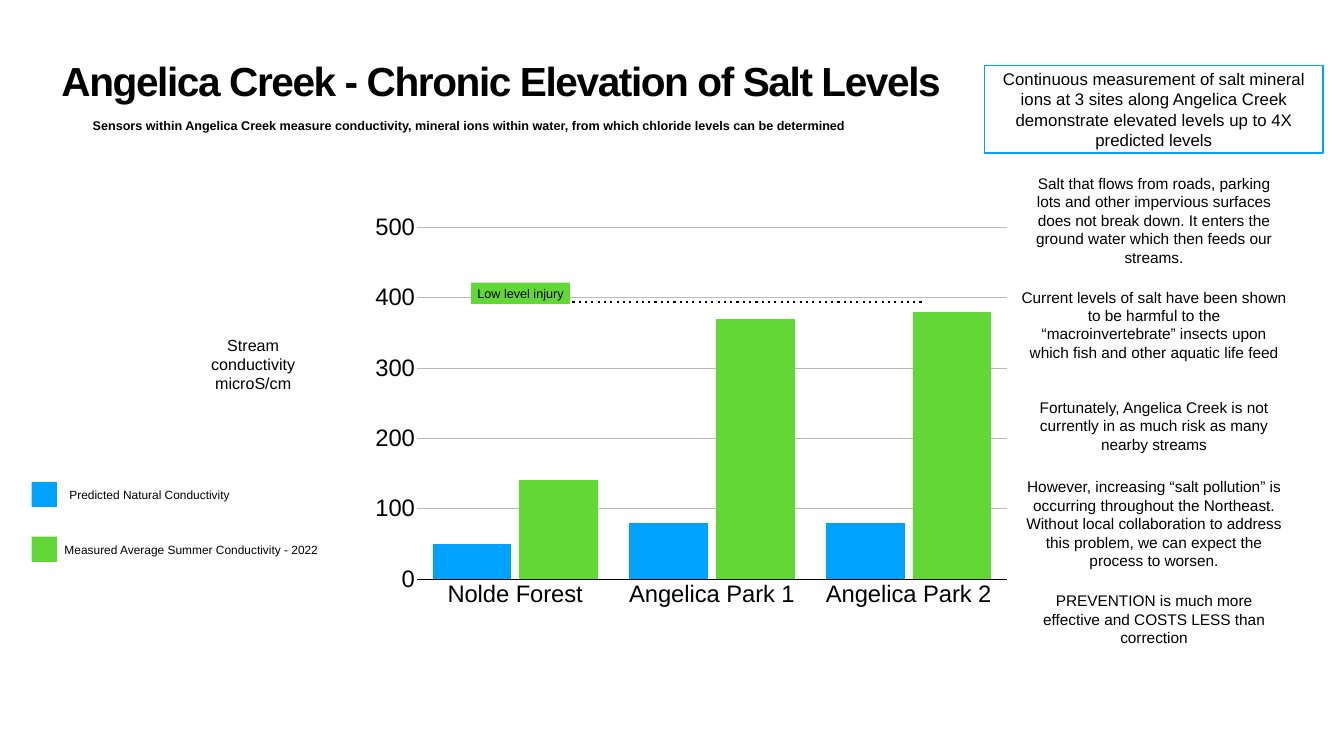
from dataclasses import dataclass

from lxml.etree import SubElement
from pptx import Presentation
from pptx.chart.data import CategoryChartData
from pptx.dml.color import RGBColor
from pptx.enum.chart import XL_CHART_TYPE, XL_TICK_MARK
from pptx.enum.shapes import MSO_CONNECTOR, MSO_SHAPE
from pptx.enum.text import MSO_ANCHOR, PP_ALIGN
from pptx.oxml import parse_xml
from pptx.oxml.ns import nsdecls, qn
from pptx.util import Inches, Pt


@dataclass(frozen=True)
class Theme:
    """Colours, font and type sizes of the slide."""
    font: str = "Arial"
    ink: str = "000000"
    paper: str = "FFFFFF"
    grid: str = "B8B8B8"
    predicted: str = "00A2FF"
    measured: str = "61D836"
    title: int = 58
    axis: int = 34
    callout: int = 24
    unit: int = 23
    body: int = 22
    small: int = 18
    legend: int = 17


THEME = Theme()
SIDE_NOTES = [
    ((20.27, 3.38, 5.26, 1.98), "Salt that flows from roads, parking lots and other impervious surfaces "
     "does not break down. It enters the ground water which then feeds our streams."),
    ((20.2, 5.64, 5.4, 1.6), "Current levels of salt have been shown to be harmful to the "
     "“macroinvertebrate” insects upon which fish and other aquatic life feed"),
    ((20.3, 7.83, 5.2, 1.23), "Fortunately, Angelica Creek is not currently in as much risk as many "
     "nearby streams"),
    ((20.3, 9.21, 5.2, 2.35), "However, increasing “salt pollution” is occurring throughout the Northeast. "
     "Without local collaboration to address this problem, we can expect the process to worsen."),
    ((20.6, 11.67, 4.6, 1.23), "PREVENTION is much more effective and COSTS LESS than correction"),
]
LEGEND = [
    (9.56, THEME.predicted, (1.29, 3.36), "Predicted Natural Conductivity"),
    (10.65, THEME.measured, (1.2, 5.26), "Measured Average Summer Conductivity - 2022 "),
]


def color(value):
    """Turn a hex string into a colour."""
    return RGBColor.from_string(value)


def style_font(font, size, bold=False):
    """Give a font the theme face and ink at a size."""
    font.name = THEME.font
    font.size = Pt(size)
    font.bold = bold
    font.color.rgb = color(THEME.ink)


def write(shape, text, size, bold=False, align=PP_ALIGN.CENTER,
          anchor=MSO_ANCHOR.MIDDLE, wrap=True):
    """Write one paragraph into a shape and return its span."""
    frame = shape.text_frame
    frame.word_wrap = wrap
    frame.vertical_anchor = anchor
    frame.margin_left = frame.margin_right = Inches(0.06)
    frame.margin_top = frame.margin_bottom = Inches(0.06)
    para = frame.paragraphs[0]
    para.alignment = align
    span = para.add_run()
    span.text = text
    style_font(span.font, size, bold)
    return span


def add_text(page, area, text, size, **options):
    """Add a text box and return its span."""
    box = page.shapes.add_textbox(*map(Inches, area))
    return write(box, text, size, **options)


def add_block(page, area, fill, line=None):
    """Add a filled rectangle, outlined when a line colour is given."""
    block = page.shapes.add_shape(MSO_SHAPE.RECTANGLE, *map(Inches, area))
    block.shadow.inherit = False
    block.fill.solid()
    block.fill.fore_color.rgb = color(fill)
    if line:
        block.line.color.rgb = color(line)
        block.line.width = Pt(2)
    else:
        block.line.fill.background()
    return block


def add_heading(page):
    """Add the tightly spaced title and the subtitle."""
    span = add_text(page, (1.16, 0.33, 24.03, 1.79),
                    "Angelica Creek - Chronic Elevation of Salt Levels", THEME.title,
                    bold=True, align=PP_ALIGN.LEFT, anchor=MSO_ANCHOR.BOTTOM)
    span.font._element.set("spc", "-200")
    page.shapes[-1].text_frame.paragraphs[0].line_spacing = 0.8
    add_text(page, (1.78, 2.27, 15.22, 0.67),
             "Sensors within Angelica Creek measure conductivity, mineral ions within water, "
             "from which chloride levels can be determined", THEME.small,
             bold=True, align=PP_ALIGN.LEFT, anchor=MSO_ANCHOR.TOP)


def place_plot(chart, x, y, width, height):
    """Fix the inner plot area as fractions of the chart."""
    area = chart.element.find(".//" + qn("c:plotArea"))
    for layout in area.findall(qn("c:layout")):
        area.remove(layout)
    settings = {"layoutTarget": "inner", "xMode": "edge", "yMode": "edge",
                "x": x, "y": y, "w": width, "h": height}
    items = "".join(f'<c:{name} val="{value}"/>' for name, value in settings.items())
    area.insert(0, parse_xml(
        f'<c:layout {nsdecls("c")}><c:manualLayout>{items}</c:manualLayout></c:layout>'))


def add_conductivity_chart(page):
    """Add the clustered columns of predicted and measured conductivity."""
    data = CategoryChartData(number_format="0")
    data.categories = ["Nolde Forest", "Angelica Park 1", "Angelica Park 2"]
    data.add_series("Predicted Natural Conductivity", [50, 80, 80])
    data.add_series("Measured Average Summer Conductivity - 2022", [140, 370, 380])
    area = map(Inches, (7.12, 3.97, 12.93, 8.42))
    chart = page.shapes.add_chart(XL_CHART_TYPE.COLUMN_CLUSTERED, *area, data).chart
    chart.has_legend = False
    chart.has_title = False
    place_plot(chart, 0.089, 0.064, 0.906, 0.829)
    plot = chart.plots[0]
    plot.vary_by_categories = False
    plot.gap_width = 40
    plot.overlap = -10
    for series, fill in zip(plot.series, (THEME.predicted, THEME.measured)):
        series.format.fill.solid()
        series.format.fill.fore_color.rgb = color(fill)
    for axis in (chart.category_axis, chart.value_axis):
        axis.major_tick_mark = axis.minor_tick_mark = XL_TICK_MARK.NONE
        style_font(axis.tick_labels.font, THEME.axis)
    chart.category_axis.format.line.color.rgb = color(THEME.ink)
    chart.category_axis.format.line.width = Pt(1)
    values = chart.value_axis
    values.minimum_scale, values.maximum_scale, values.major_unit = 0, 500, 100
    values.format.line.fill.background()
    values.major_gridlines.format.line.color.rgb = color(THEME.grid)
    values.major_gridlines.format.line.width = Pt(1)


def add_legend(page):
    """Add a swatch and a label for each series."""
    for top, fill, (left, width), label in LEGEND:
        add_block(page, (0.63, top, 0.5, 0.5), fill)
        add_text(page, (left, top + 0.06, width, 0.38), label, THEME.legend, wrap=False)


def add_injury_threshold(page):
    """Add the dotted threshold line and its label."""
    ends = map(Inches, (11.36, 6, 18.36, 6))
    line = page.shapes.add_connector(MSO_CONNECTOR.STRAIGHT, *ends)
    line.line.color.rgb = color(THEME.ink)
    line.line.width = Pt(3)
    dashes = SubElement(line.line._get_or_add_ln(), qn("a:custDash"))
    SubElement(dashes, qn("a:ds"), d="100000", sp="200000")
    SubElement(line._element.spPr, qn("a:effectLst"))
    label = add_block(page, (9.35, 5.61, 1.96, 0.42), THEME.measured)
    write(label, "Low level injury", THEME.small)


def main():
    """Build the salt level slide and save it."""
    deck = Presentation()
    deck.slide_width, deck.slide_height = Inches(26.67), Inches(15)
    page = deck.slides.add_slide(deck.slide_layouts[6])
    add_heading(page)
    add_text(page, (3.58, 6.59, 2.89, 2.09), "Stream conductivity microS/cm",
             THEME.unit, anchor=MSO_ANCHOR.TOP)
    add_conductivity_chart(page)
    add_legend(page)
    callout = add_block(page, (19.54, 1.3, 6.71, 1.74), THEME.paper, THEME.predicted)
    write(callout, "Continuous measurement of salt mineral ions at 3 sites along Angelica Creek "
          "demonstrate elevated levels up to 4X predicted levels", THEME.callout)
    for area, text in SIDE_NOTES:
        add_text(page, area, text, THEME.body)
    add_injury_threshold(page)
    deck.save("out.pptx")


if __name__ == "__main__":
    main()
